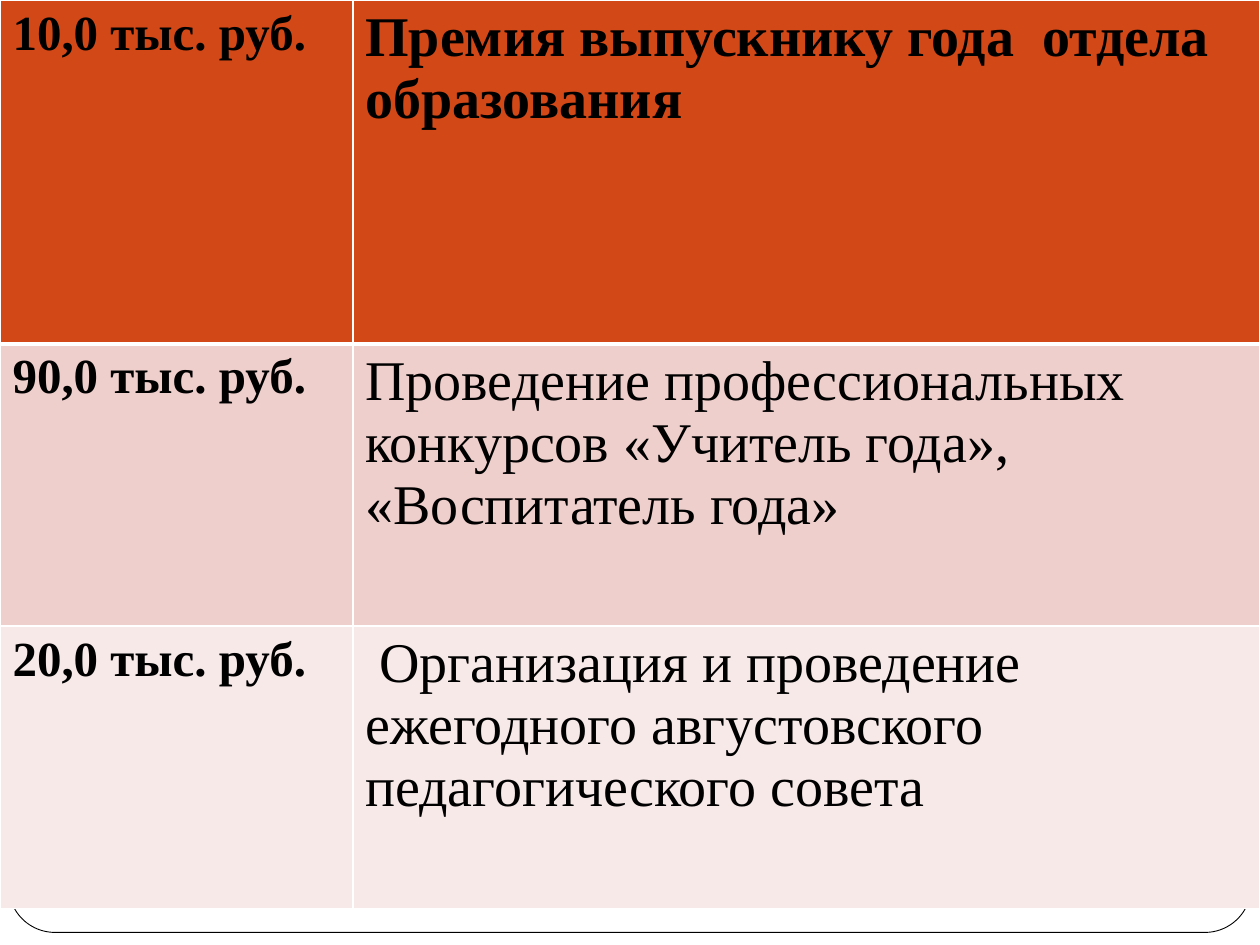
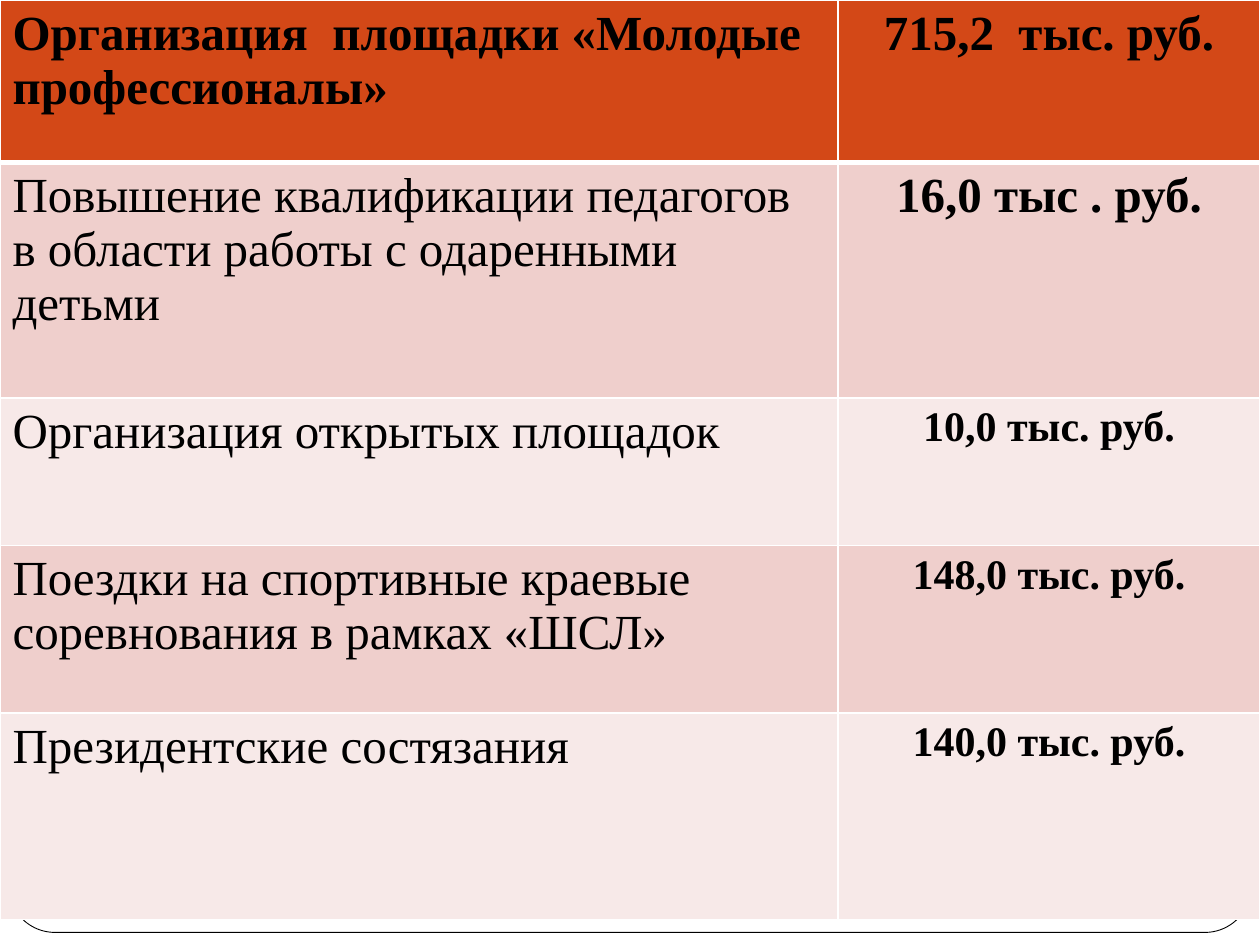
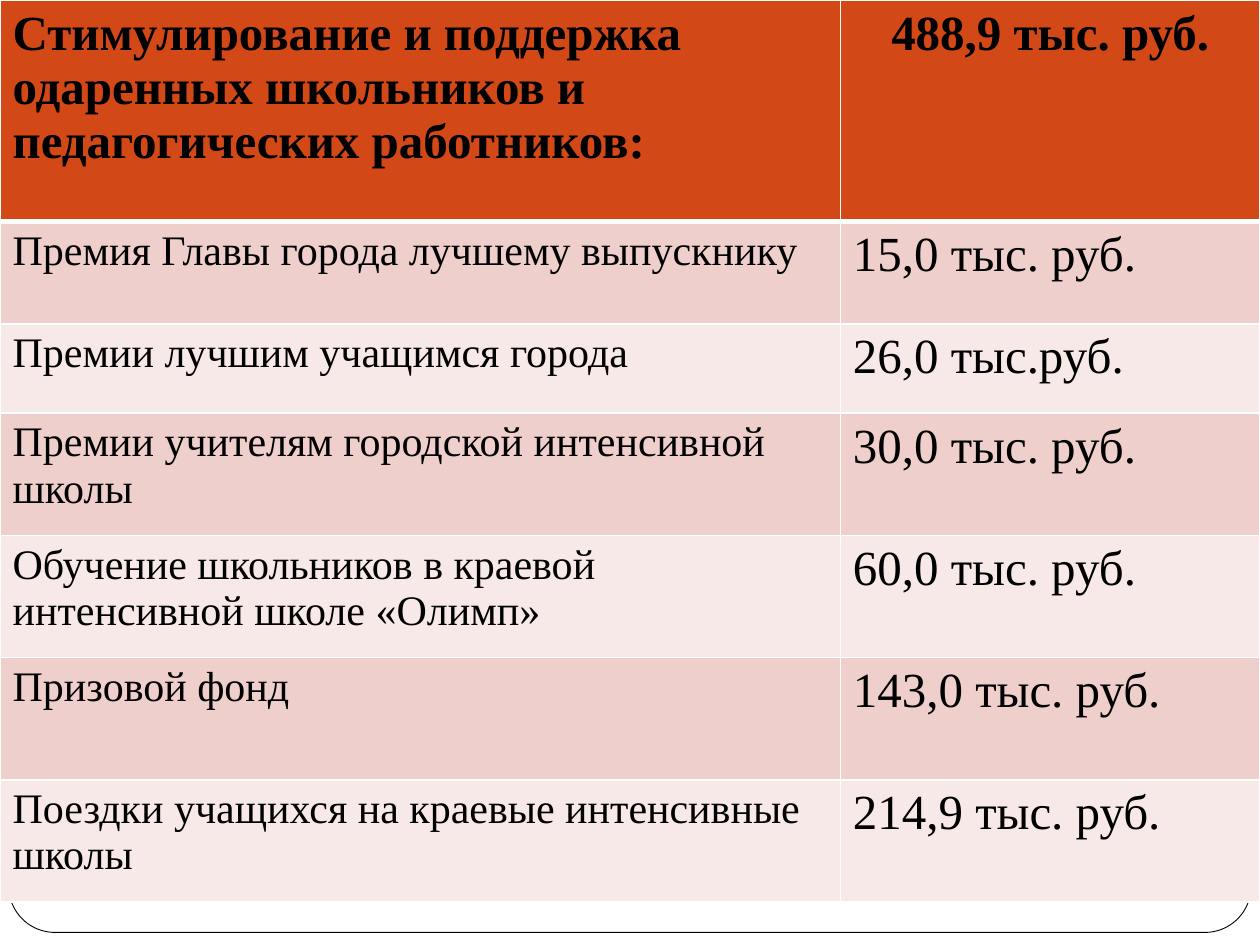
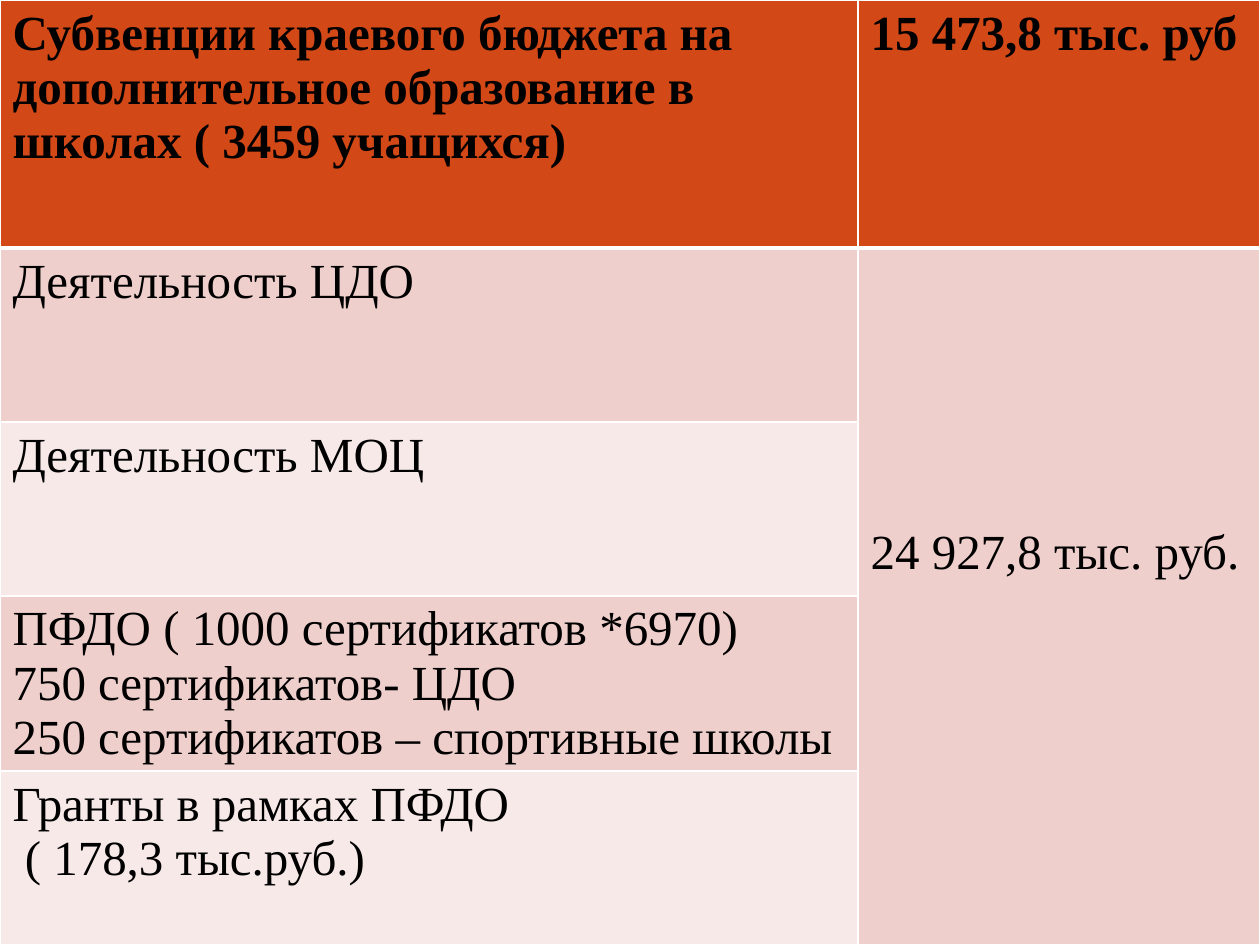
from dataclasses import dataclass

from lxml import etree
from pptx import Presentation
from pptx.dml.color import RGBColor
from pptx.enum.shapes import MSO_SHAPE
from pptx.enum.text import MSO_ANCHOR, PP_ALIGN
from pptx.oxml.ns import qn
from pptx.util import Inches, Pt

ROUNDED = MSO_SHAPE.ROUNDED_RECTANGLE
MIDDLE = MSO_ANCHOR.MIDDLE
LEFT, CENTER = PP_ALIGN.LEFT, PP_ALIGN.CENTER

COLORS = {
    "paper": "FFFFFF",
    "ink": "000000",
    "header": "D34817",
    "band_dark": "EFCFCC",
    "band_light": "F7E9E8",
}
FONT = "Times New Roman"
BLANK_LAYOUT = 6
GRID_WIDTH, HEADER_RULE_WIDTH = 1, 3


@dataclass
class Entry:
    """Content of one table cell; each line is a paragraph, rows is its span."""
    text: str
    size: int = 28
    bold: bool = False
    align: PP_ALIGN = LEFT
    rows: int = 1
    raised: float = 0


class BudgetDeck:
    def __init__(self):
        self.deck = Presentation()
        self.deck.slide_width = Inches(10)
        self.deck.slide_height = Inches(7.5)
        self.page = None

    def color(self, name):
        return RGBColor.from_string(COLORS[name])

    def new_page(self):
        self.page = self.deck.slides.add_slide(self.deck.slide_layouts[BLANK_LAYOUT])
        self.frame()

    def frame(self):
        """Draw the thin rounded border that every page has."""
        box = self.page.shapes.add_shape(
            ROUNDED, Inches(0.07), Inches(0.08), Inches(9.86), Inches(7.32))
        box.adjustments[0] = 0.05
        box.shadow.inherit = False
        box.fill.solid()
        box.fill.fore_color.rgb = self.color("paper")
        box.line.color.rgb = self.color("ink")
        box.line.width = Pt(0.5)

    def table(self, widths, heights, rows):
        """Fill a full-width table; None marks a cell covered by a merged one."""
        grid = self.page.shapes.add_table(
            len(heights), len(widths), 0, 0,
            Inches(sum(widths)), Inches(sum(heights))).table
        for column, width in zip(grid.columns, widths):
            column.width = Inches(width)
        for row, height in zip(grid.rows, heights):
            row.height = Inches(height)
        for r, entries in enumerate(rows):
            for c, entry in enumerate(entries):
                if entry is None:
                    continue
                cell = grid.cell(r, c)
                if entry.rows > 1:
                    cell.merge(grid.cell(r + entry.rows - 1, c))
                self.borders(cell, r)
                self.fill(cell, r)
                self.cell_text(cell, entry)

    def borders(self, cell, row):
        widths = {
            "a:lnL": GRID_WIDTH,
            "a:lnR": GRID_WIDTH,
            "a:lnT": HEADER_RULE_WIDTH if row == 1 else GRID_WIDTH,
            "a:lnB": HEADER_RULE_WIDTH if row == 0 else GRID_WIDTH,
        }
        properties = cell._tc.get_or_add_tcPr()
        for tag, width in widths.items():
            line = etree.SubElement(properties, qn(tag), w=str(Pt(width)))
            paint = etree.SubElement(line, qn("a:solidFill"))
            etree.SubElement(paint, qn("a:srgbClr"), val=COLORS["paper"])

    def fill(self, cell, row):
        band = "band_dark" if row % 2 else "band_light"
        cell.fill.solid()
        cell.fill.fore_color.rgb = self.color(band if row else "header")

    def cell_text(self, cell, entry):
        if entry.raised:
            cell.vertical_anchor = MIDDLE
            cell.margin_bottom = Inches(entry.raised)
        frame = cell.text_frame
        for i, line in enumerate(entry.text.split("\n")):
            para = frame.add_paragraph() if i else frame.paragraphs[0]
            para.alignment = entry.align
            span = para.add_run()
            span.text = line
            span.font.name = FONT
            span.font.size = Pt(entry.size)
            span.font.bold = entry.bold
            span.font.color.rgb = self.color("ink")


def amount(text, size=28):
    return Entry(text, size, bold=True, align=CENTER)


def build_awards(show):
    show.new_page()
    show.table([2.8, 7.2], [2.73, 2.24, 2.24], [
        [Entry("10,0 тыс. руб.", bold=True),
         Entry("Премия выпускнику года  отдела образования", 32, bold=True)],
        [Entry("90,0 тыс. руб.", bold=True),
         Entry("Проведение профессиональных конкурсов «Учитель года», "
               "«Воспитатель года»", 32)],
        [Entry("20,0 тыс. руб.", bold=True),
         Entry(" Организация и проведение ежегодного августовского "
               "педагогического совета", 32)],
    ])


def build_events(show):
    show.new_page()
    show.table([6.65, 3.35], [1.29, 1.87, 1.17, 1.33, 1.64], [
        [Entry("Организация  площадки «Молодые профессионалы»", bold=True),
         amount("715,2  тыс. руб.")],
        [Entry("Повышение квалификации педагогов в области работы "
               "с одаренными детьми"), amount("16,0 тыс . руб.")],
        [Entry("Организация открытых площадок"), amount("10,0 тыс. руб.", 24)],
        [Entry("Поездки на спортивные краевые соревнования в рамках «ШСЛ»"),
         amount("148,0 тыс. руб.", 24)],
        [Entry("Президентские состязания"), amount("140,0 тыс. руб.", 24)],
    ])


def build_support(show):
    items = [
        ("Премия Главы города лучшему выпускнику", "15,0 тыс. руб."),
        ("Премии лучшим учащимся города", "26,0 тыс.руб."),
        ("Премии учителям городской интенсивной школы", "30,0 тыс. руб."),
        ("Обучение школьников в краевой интенсивной школе «Олимп»", "60,0 тыс. руб."),
        ("Призовой фонд", "143,0 тыс. руб."),
        ("Поездки учащихся на краевые интенсивные школы", "214,9 тыс. руб."),
    ]
    header = [Entry("Стимулирование и поддержка одаренных школьников и "
                    "педагогических работников:", bold=True),
              amount("488,9 тыс. руб.")]
    show.new_page()
    show.table([6.67, 3.33], [1.76, 0.81, 0.71] + [0.97] * 4,
               [header] + [[Entry(item, 24), Entry(cost)] for item, cost in items])


def build_subsidies(show):
    show.new_page()
    show.table([6.81, 3.19], [1.97] + [1.38] * 4, [
        [Entry("Субвенции краевого бюджета на дополнительное образование "
               "в школах ( 3459 учащихся)", bold=True),
         Entry("15 473,8 тыс. руб", bold=True)],
        [Entry("Деятельность ЦДО"),
         Entry("24 927,8 тыс. руб.", rows=4, raised=0.75)],
        [Entry("Деятельность МОЦ"), None],
        [Entry("ПФДО ( 1000 сертификатов *6970)\n"
               "750 сертификатов- ЦДО\n"
               "250 сертификатов – спортивные школы"), None],
        [Entry("Гранты в рамках ПФДО\n ( 178,3 тыс.руб.)"), None],
    ])


def main():
    show = BudgetDeck()
    build_awards(show)
    build_events(show)
    build_support(show)
    build_subsidies(show)
    show.deck.save("out.pptx")


if __name__ == "__main__":
    main()
